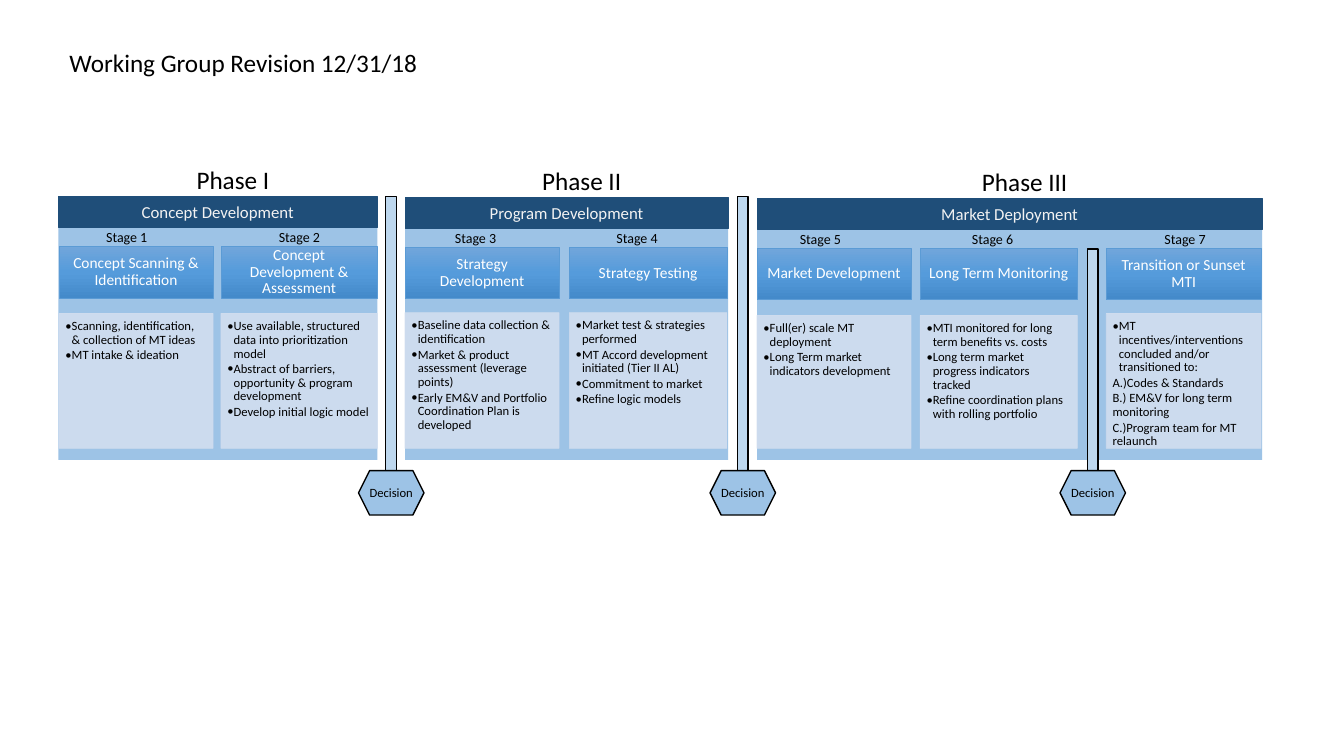
from copy import deepcopy

from pptx import Presentation, util as u
from pptx.dml.color import RGBColor
from pptx.enum import shapes, text
from pptx.oxml import ns, xmlchemy as x

Cm, Pt = u.Cm, u.Pt
COLORS = {
    "black": "000000", "white": "FFFFFF", "pale": "F2F2F2", "navy": "1F4E79",
    "panel": "9DC3E6", "bar": "BDD7EE", "notes": "D2DEEF", "edge": "5B9BD5",
    "top": "71A6DB", "middle": "559BDB", "bottom": "448ACA",
}
CENTER, LEFT = text.PP_ALIGN.CENTER, text.PP_ALIGN.LEFT
MIDDLE, TOP = text.MSO_ANCHOR.MIDDLE, text.MSO_ANCHOR.TOP
RECT, HEXAGON = shapes.MSO_SHAPE.RECTANGLE, shapes.MSO_SHAPE.HEXAGON
NO_INSETS = (0, 0, 0, 0)
BOX_INSETS = (0.22, 0.13, 0.22, 0.13)
NOTE_INSETS = (0.16, 0.16, 0.2, 0.24)

PHASES = [
    ("Phase I", "Concept Development", (1.47, 4.96, 8.04, 6.63), [
        (0.02, 3.88, 0.94, 2.94, "Stage 1", "Concept Scanning & Identification", [
            "Scanning, identification, & collection of MT ideas",
            "MT intake & ideation"]),
        (4.1, 3.94, 5.29, 2.94, "Stage 2", "Concept Development & Assessment", [
            "Use available, structured data into prioritization model",
            "Abstract of barriers, opportunity & program development",
            "Develop initial logic model"]),
    ]),
    ("Phase II", "Program Development", (10.21, 4.98, 8.14, 6.61), [
        (0, 3.88, 0.99, 2.9, "Stage 3", "Strategy Development", [
            "Baseline data collection & identification",
            "Market & product assessment (leverage points)",
            "Early EM&V and Portfolio Coordination Plan is developed"]),
        (4.14, 3.97, 5.06, 2.9, "Stage 4", "Strategy Testing", [
            "Market test & strategies performed",
            "MT Accord development initiated (Tier II AL)",
            "Commitment to market",
            "Refine logic models"]),
    ]),
    ("Phase III", "Market Deployment", (19.08, 5, 12.73, 6.59), [
        (0, 3.88, 0.81, 2.95, "Stage 5", "Market Development", [
            "Full(er) scale MT deployment",
            "Long Term market indicators development"]),
        (4.11, 3.96, 5.15, 2.95, "Stage 6", "Long Term Monitoring", [
            "MTI monitored for long term benefits vs. costs",
            "Long term market progress indicators tracked",
            "Refine coordination plans with rolling portfolio"]),
        (8.8, 3.9, 10, 2.9, "Stage 7", "Transition or Sunset MTI", [
            "MT incentives/interventions concluded and/or transitioned to:",
            "A.)Codes & Standards",
            "B.) EM&V for long term monitoring",
            "C.)Program team for MT relaunch"]),
    ]),
]
GATES = [(9.72, 4.96, 0.27, 6.9), (18.58, 4.96, 0.27, 6.9), (27.4, 6.28, 0.27, 5.58)]


def rgb(name):
    """Look up a named colour."""
    return RGBColor.from_string(COLORS[name])


def set_all(obj, values):
    """Set every attribute in a dict of format values."""
    for name, value in values.items():
        setattr(obj, name, value)


def write(sp, lines, size, color="black", align=CENTER, anchor=MIDDLE,
          wrap=True, insets=BOX_INSETS, spacing=1.0, after=0):
    """Fill a shape with formatted paragraphs."""
    tf = sp.text_frame
    set_all(tf, {"auto_size": text.MSO_AUTO_SIZE.NONE, "word_wrap": wrap,
                 "vertical_anchor": anchor})
    set_all(tf, {f"margin_{side}": Cm(v) for side, v in
                 zip(("left", "top", "right", "bottom"), insets)})
    for i, line in enumerate(lines):
        p = tf.paragraphs[0] if i == 0 else tf.add_paragraph()
        set_all(p, {"alignment": align, "line_spacing": spacing, "space_after": Pt(after)})
        r = p.add_run()
        r.text = line
        set_all(r.font, {"name": "Calibri", "size": Pt(size)})
        r.font.color.rgb = rgb(color)


def add_box(s, box, fill, line=None, width=1, kind=RECT):
    """Draw a flat preset shape in a box given in centimetres."""
    sp = s.shapes.add_shape(kind, *map(Cm, box))
    sp.shadow.inherit = False
    sp.fill.solid()
    sp.fill.fore_color.rgb = rgb(fill)
    if line:
        sp.line.color.rgb = rgb(line)
        sp.line.width = Pt(width)
    else:
        sp.line.fill.background()
    return sp


def add_label(s, box, label, size):
    """Place a centred one-line caption."""
    sp = s.shapes.add_textbox(*map(Cm, box))
    write(sp, [label], size, wrap=False, anchor=TOP)


def shade(sp):
    """Give a shape the vertical three-stop blue gradient."""
    sp.fill.gradient()
    sp.fill.gradient_angle = 270
    stops = sp._element.spPr.find(".//" + ns.qn("a:gsLst"))
    stops.append(deepcopy(stops[0]))
    for stop, name, position in zip(sp.fill.gradient_stops,
                                    ("top", "middle", "bottom"), (0, 0.5, 1)):
        stop.color.rgb = rgb(name)
        stop.position = position


def soften(sp):
    """Make the fill and line of a shape 90 percent opaque."""
    for color in sp._element.spPr.iter(ns.qn("a:srgbClr")):
        color.append(x.OxmlElement("a:alpha"))
        color[-1].set("val", "90000")


def add_bullet(p):
    """Give a paragraph a hanging round bullet."""
    pPr = p._p.get_or_add_pPr()
    pPr.set("marL", "57150")
    pPr.set("indent", "-57150")
    for tag, key, value in (("a:buFont", "typeface", "Calibri"), ("a:buChar", "char", "•")):
        bullet = x.OxmlElement(tag)
        bullet.set(key, value)
        pPr.append(bullet)


def add_stage(s, box, label_left, notes_dy, label, title, notes):
    """Draw one stage: caption, shaded title and notes."""
    left, top, width, height = box
    add_label(s, (label_left, top + 0.67, 1.57, 0.68), label, 10)
    sp = add_box(s, (left, top + 1.25, width, 1.3), "top", "edge", 0.5)
    shade(sp)
    write(sp, [title], 11, "white", spacing=0.9)
    sp = add_box(s, (left, top + notes_dy, width, height - notes_dy - 0.29),
                 "notes", "notes", 0.5)
    soften(sp)
    write(sp, notes, 9, align=LEFT, anchor=TOP, insets=NOTE_INSETS, spacing=0.9, after=1.35)
    for p in sp.text_frame.paragraphs:
        if not p.text.startswith(("A.)", "B.)", "C.)")):
            add_bullet(p)


def add_phase(s, box, label, header, stages):
    """Draw one phase: caption, header band, panel and stages."""
    left, top, width, height = box
    add_box(s, (left, top + 0.78, width, height - 0.78), "panel")
    sp = add_box(s, (left, top, width, 0.78), "navy", "navy", 0.75)
    write(sp, [header], 12, "pale")
    add_label(s, (left + width / 2 - 0.97, top - 0.94, 2.7, 1.02), label, 18)
    for dx, stage_width, label_dx, *parts in stages:
        add_stage(s, (left + dx, top, stage_width, height), left + label_dx, *parts)


def add_gate(s, box):
    """Draw a decision gate: a bar standing on a hexagon."""
    left, top, width, height = box
    add_box(s, box, "bar", "black")
    sp = add_box(s, (left + width / 2 - 0.82, top + height, 1.65, 1.12),
                 "panel", "black", kind=HEXAGON)
    write(sp, ["Decision"], 9, wrap=False, insets=NO_INSETS)


def add_title(s, box, title):
    """Move and format the title placeholder."""
    sp = s.shapes.title
    set_all(sp, dict(zip(("left", "top", "width", "height"), map(Cm, box))))
    write(sp, [title], 18, align=LEFT, wrap=False, insets=(0.25, 0.13, 0.25, 0.13))


def main():
    """Build and save the slide."""
    prs = Presentation()
    set_all(prs, {"slide_width": Cm(33.87), "slide_height": Cm(19.05)})
    s = prs.slides.add_slide(prs.slide_layouts[5])
    add_title(s, (1.5, 1.07, 9.37, 1.02), "Working Group Revision 12/31/18")
    for label, header, box, stages in PHASES:
        add_phase(s, box, label, header, stages)
    for box in GATES:
        add_gate(s, box)
    prs.save("out.pptx")


if __name__ == "__main__":
    main()
